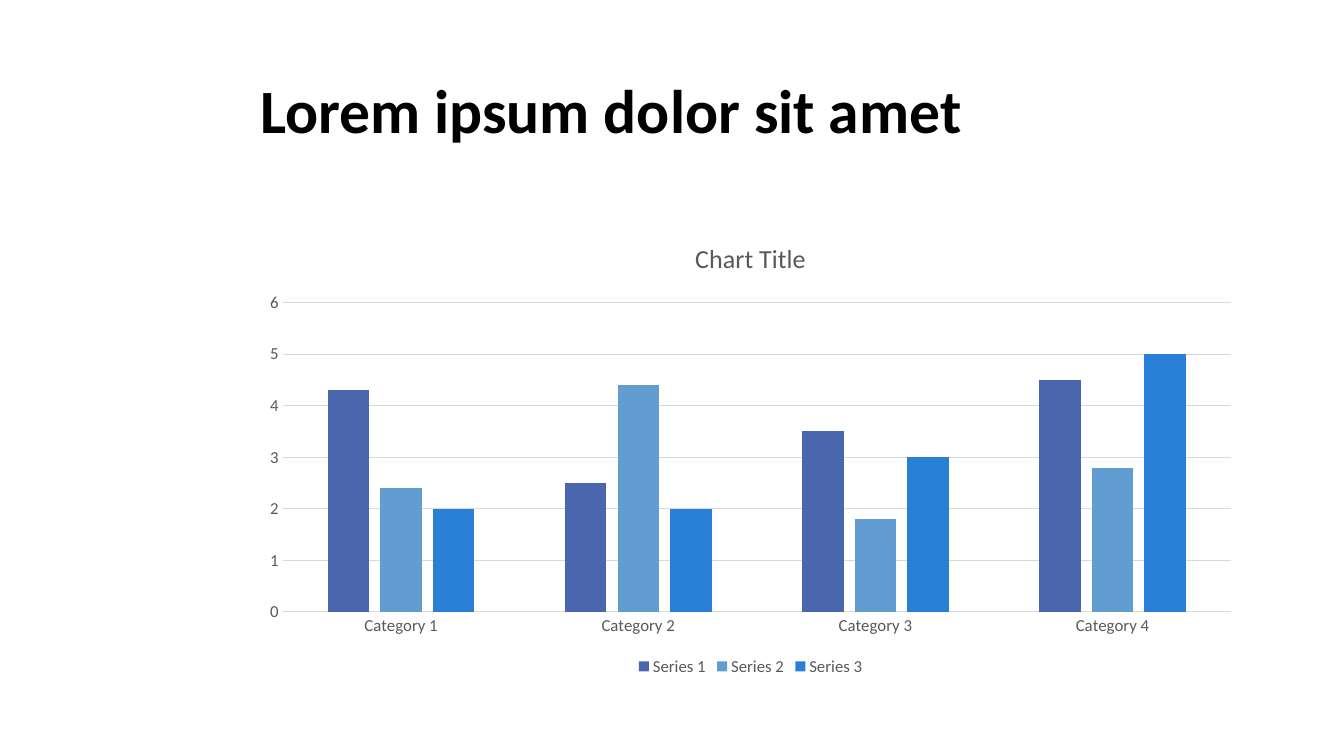
from pptx import Presentation
from pptx.chart.data import CategoryChartData
from pptx.dml.color import RGBColor
from pptx.enum.chart import XL_CHART_TYPE as ChartType
from pptx.enum.chart import XL_LEGEND_POSITION as LegendPosition
from pptx.enum.chart import XL_TICK_MARK as TickMark
from pptx.enum.text import MSO_ANCHOR as Anchor
from pptx.enum.text import PP_ALIGN as Align
from pptx.util import Inches, Pt

BLACK = RGBColor(0x00, 0x00, 0x00)
LABEL_GRAY = RGBColor(0x59, 0x59, 0x59)
GRID_GRAY = RGBColor(0xD9, 0xD9, 0xD9)
INDIGO = RGBColor(0x4A, 0x66, 0xAC)
SKY = RGBColor(0x62, 0x9D, 0xD1)
BLUE = RGBColor(0x29, 0x7F, 0xD5)

SERIES = [
    ("Series 1", (4.3, 2.5, 3.5, 4.5), INDIGO),
    ("Series 2", (2.4, 4.4, 1.8, 2.8), SKY),
    ("Series 3", (2, 2, 3, 5), BLUE),
]


def format_font(font, size, color, bold=False):
    values = {"name": "Calibri", "size": Pt(size), "bold": bold}
    for name, value in values.items():
        setattr(font, name, value)
    font.color.rgb = color


presentation = Presentation()
presentation.slide_width = Inches(13.33)
presentation.slide_height = Inches(7.5)
slide = presentation.slides.add_slide(presentation.slide_layouts[5])

title = slide.shapes.title
title_box = {"left": 2.48, "top": 0.4, "width": 10.66, "height": 1.45}
for name, value in title_box.items():
    setattr(title, name, Inches(value))
title.text_frame.vertical_anchor = Anchor.MIDDLE
paragraph = title.text_frame.paragraphs[0]
paragraph.alignment = Align.LEFT
paragraph.line_spacing = 0.9
run = paragraph.add_run()
run.text = "Lorem ipsum dolor sit amet"
format_font(run.font, 44, BLACK, bold=True)

chart_data = CategoryChartData()
chart_data.categories = [f"Category {number}" for number in range(1, 5)]
for name, values, color in SERIES:
    chart_data.add_series(name, values)
chart = slide.shapes.add_chart(
    ChartType.COLUMN_CLUSTERED,
    Inches(2.48), Inches(2.19), Inches(9.93), Inches(4.56),
    chart_data,
).chart
format_font(chart.font, 10, BLACK)

chart.has_title = True
chart.chart_title.include_in_layout = False
chart_title = chart.chart_title.text_frame
chart_title.text = "Chart Title"
format_font(chart_title.paragraphs[0].runs[0].font, 18.6, LABEL_GRAY)

chart.has_legend = True
chart.legend.position = LegendPosition.BOTTOM
chart.legend.include_in_layout = False
format_font(chart.legend.font, 12, LABEL_GRAY)

plot = chart.plots[0]
plot_format = {"gap_width": 219, "overlap": -27, "vary_by_categories": False}
for name, value in plot_format.items():
    setattr(plot, name, value)
for series, (name, values, color) in zip(plot.series, SERIES):
    series.format.fill.solid()
    series.format.fill.fore_color.rgb = color

value_axis = chart.value_axis
value_axis.has_major_gridlines = True
scale = {"minimum_scale": 0, "maximum_scale": 6, "major_unit": 1}
for name, value in scale.items():
    setattr(value_axis, name, value)
for axis in (chart.category_axis, value_axis):
    axis.major_tick_mark = TickMark.NONE
    axis.minor_tick_mark = TickMark.NONE
    format_font(axis.tick_labels.font, 12, LABEL_GRAY)
value_axis.format.line.fill.background()
for line in (chart.category_axis.format.line, value_axis.major_gridlines.format.line):
    line.color.rgb = GRID_GRAY
    line.width = Pt(0.75)

presentation.save("out.pptx")
